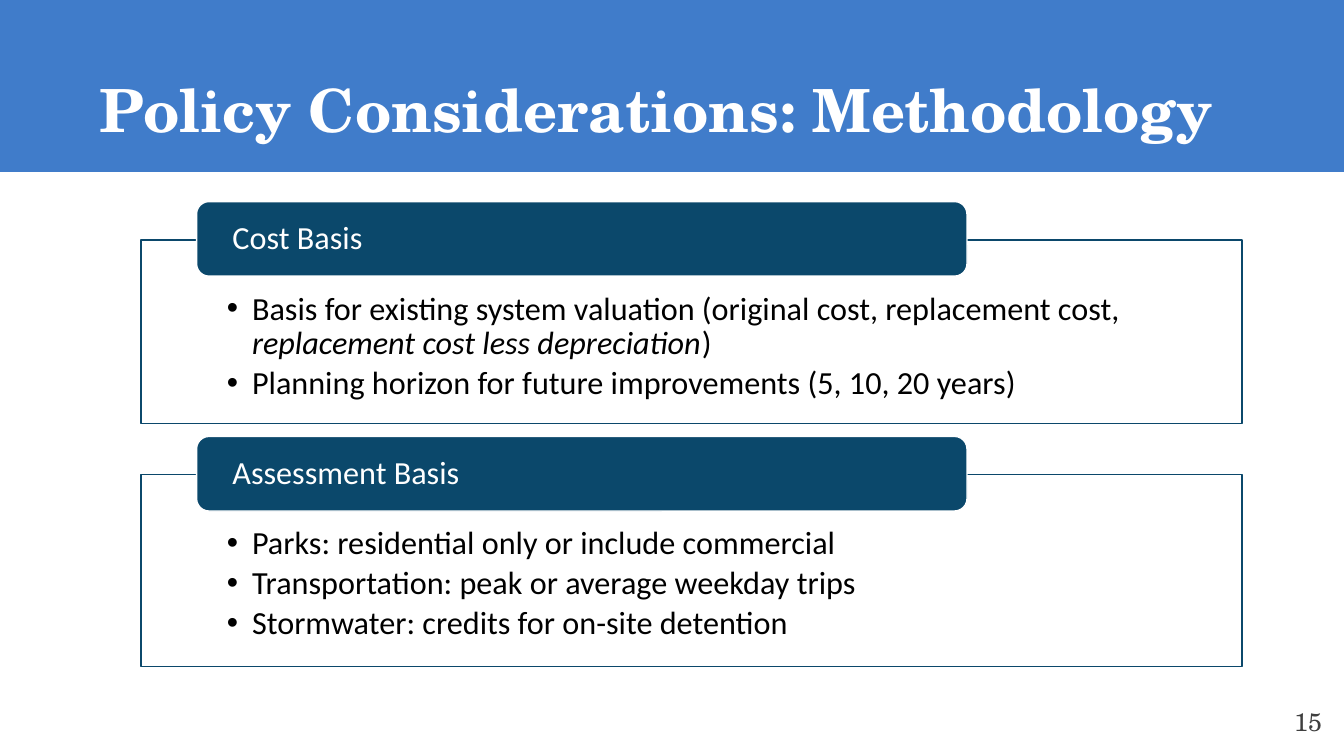
import pptx
import pptx.util
import pptx.dml.color
import pptx.enum.shapes
import pptx.enum.text
import pptx.oxml.ns
import lxml.etree

RGBColor = pptx.dml.color.RGBColor
BLUE = RGBColor(0x40, 0x7C, 0xCA)
NAVY = RGBColor(0x0B, 0x48, 0x6B)
WHITE = RGBColor(0xFF, 0xFF, 0xFF)
BLACK = RGBColor(0x00, 0x00, 0x00)
GREY = RGBColor(0x3F, 0x3F, 0x3F)
SERIF = "TeX Gyre Schola"
SANS = "Calibri"
SHAPES = pptx.enum.shapes.MSO_SHAPE
ALIGN = pptx.enum.text.PP_ALIGN
ANCHOR = pptx.enum.text.MSO_ANCHOR
NO_FIT = pptx.enum.text.MSO_AUTO_SIZE.NONE
COLUMNS, ROWS = 40, 30
TWO_LISTS = 3

SECTION_PITCH = 9.32
SECTIONS = [
    ("Cost Basis", 7.28, [
        "Basis for existing system valuation (original cost, replacement cost, "
        "*replacement cost less depreciation*)",
        "Planning horizon for future improvements (5, 10, 20 years)",
    ]),
    ("Assessment Basis", 7.6, [
        "Parks: residential only or include commercial",
        "Transportation: peak or average weekday trips",
        "Stormwater: credits for on-site detention",
    ]),
]


class SlideBuilder:
    def __init__(self, deck):
        self.column = deck.slide_width / COLUMNS
        self.row = deck.slide_height / ROWS
        self.page = deck.slides.add_slide(deck.slide_layouts[TWO_LISTS])

    def place(self, left, top, width, height):
        return (round(left * self.column), round(top * self.row),
                round(width * self.column), round(height * self.row))

    def move(self, box, area):
        box.left, box.top, box.width, box.height = self.place(*area)

    def paint(self, box, fill, line):
        box.fill.solid()
        box.fill.fore_color.rgb = fill
        box.line.color.rgb = line
        box.line.width = pptx.util.Pt(1)

    def style(self, para, name, size, color, bold=False):
        for span in para.runs:
            span.font.name = name
            span.font.size = pptx.util.Pt(size)
            span.font.color.rgb = color
            span.font.bold = bold

    def inset(self, frame, side, top, bottom):
        frame.word_wrap = True
        frame.margin_left = frame.margin_right = pptx.util.Inches(side)
        frame.margin_top = pptx.util.Inches(top)
        frame.margin_bottom = pptx.util.Inches(bottom)

    def shape(self, kind, area, fill, line):
        box = self.page.shapes.add_shape(kind, *self.place(*area))
        box.shadow.inherit = False
        self.paint(box, fill, line)
        return box

    def band(self, area):
        box = self.shape(SHAPES.RECTANGLE, area, BLUE, BLUE)
        self.page.shapes._spTree.insert(2, box._element)

    def title(self, text, area):
        box = self.page.shapes.title
        self.move(box, area)
        frame = box.text_frame
        frame.text = text
        frame.auto_size = NO_FIT
        frame.vertical_anchor = ANCHOR.TOP
        frame.paragraphs[0].alignment = ALIGN.LEFT
        self.style(frame.paragraphs[0], SERIF, 42.5, WHITE, True)

    def bullet(self, para):
        properties = para._p.get_or_add_pPr()
        properties.set("marL", str(pptx.util.Inches(0.25)))
        properties.set("indent", str(-pptx.util.Inches(0.25)))
        mark = lxml.etree.SubElement(properties, pptx.oxml.ns.qn("a:buChar"))
        mark.set("char", "•")

    def bullets(self, slot, items, area):
        box = self.page.placeholders[slot]
        self.move(box, area)
        self.paint(box, WHITE, NAVY)
        frame = box.text_frame
        frame.auto_size = NO_FIT
        frame.vertical_anchor = ANCHOR.TOP
        self.inset(frame, 0.85, 0.52, 0.18)
        for index, item in enumerate(items):
            para = frame.add_paragraph() if index else frame.paragraphs[0]
            para.level = 1
            self.bullet(para)
            para.line_spacing = 0.9
            para.space_before = pptx.util.Pt(0)
            para.space_after = pptx.util.Pt(3.5)
            for part, text in enumerate(item.split("*")):
                span = para.add_run()
                span.text = text
                span.font.italic = part % 2 == 1
            self.style(para, SANS, 23, BLACK)

    def tab(self, text, area):
        box = self.shape(SHAPES.ROUNDED_RECTANGLE, area, NAVY, WHITE)
        frame = box.text_frame
        frame.text = text
        frame.vertical_anchor = ANCHOR.MIDDLE
        self.inset(frame, 0.32, 0, 0)
        para = frame.paragraphs[0]
        para.alignment = ALIGN.LEFT
        para.line_spacing = 0.9
        self.style(para, SANS, 23, WHITE)

    def number(self, text, area):
        box = self.page.shapes.add_textbox(*self.place(*area))
        frame = box.text_frame
        frame.word_wrap = True
        frame.text = text
        frame.paragraphs[0].alignment = ALIGN.CENTER
        self.style(frame.paragraphs[0], SERIF, 18, GREY)


def main():
    deck = pptx.Presentation()
    deck.slide_width = pptx.util.Inches(13.33)
    deck.slide_height = pptx.util.Inches(7.5)
    builder = SlideBuilder(deck)
    builder.band((0, -0.6, COLUMNS, 7.4))
    builder.title("Policy Considerations: Methodology", (2.67, 2.68, 35.83, 5.76))
    for index, (heading, height, items) in enumerate(SECTIONS):
        offset = index * SECTION_PITCH
        builder.bullets(index + 1, items, (4.2, 9.52 + offset, 32.77, height))
        builder.tab(heading, (5.85, 8 + offset, 22.93, 2.96))
    builder.number("15", (37.87, 27.84, 2.13, 1.6))
    deck.save("out.pptx")


if __name__ == "__main__":
    main()
